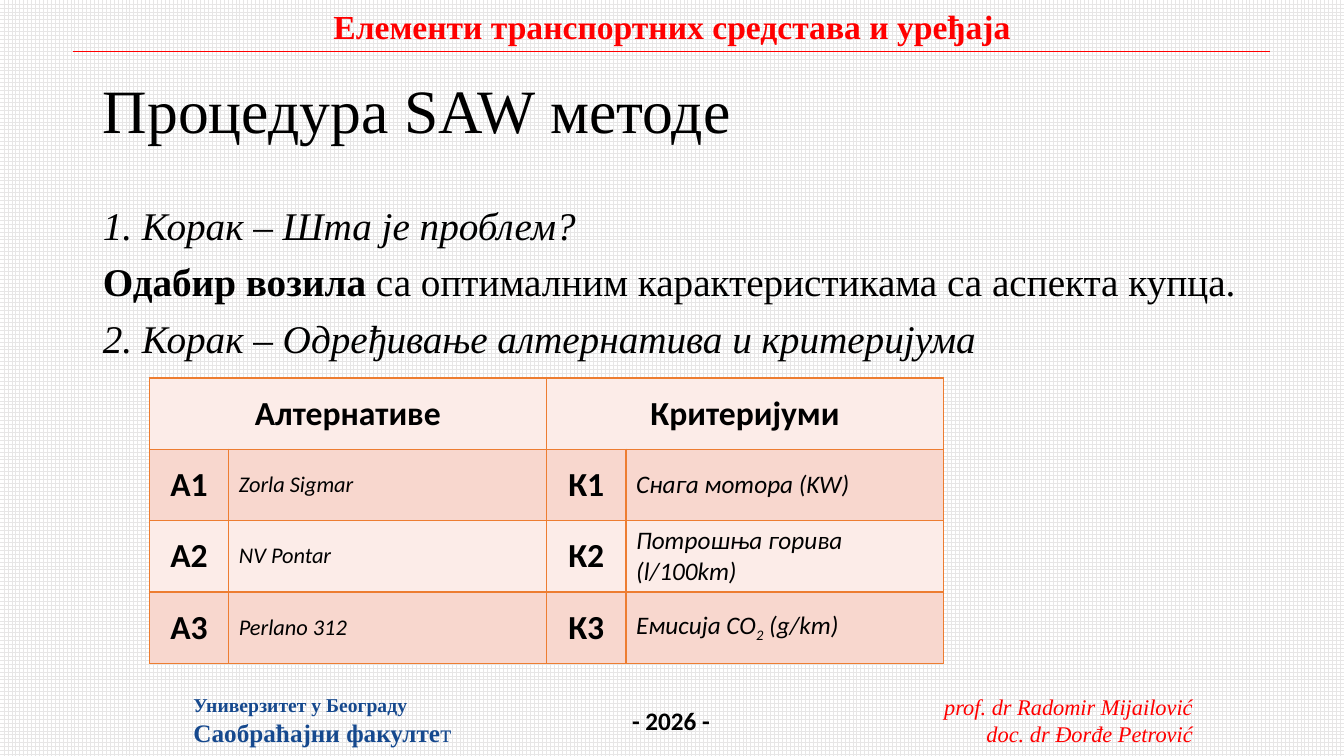
import pptx
import pptx.util
import pptx.dml.color
import pptx.enum.dml
import pptx.enum.shapes
import pptx.enum.text
import pptx.oxml
import pptx.oxml.ns
from pptx.util import Inches

SERIF = "Times New Roman"
SANS = "Calibri"
RED, BLUE, BLACK = "FF0000", "16498E", "000000"
EDGE = "ED7D31"
BANDS = ["FCECE8", "F8D7CE"]
ALIGN = pptx.enum.text.PP_ALIGN
MIDDLE = pptx.enum.text.MSO_ANCHOR.MIDDLE
FIT = pptx.enum.text.MSO_AUTO_SIZE


def color(text):
    return pptx.dml.color.RGBColor.from_string(text)


def style(run, size, face=SERIF, hue=BLACK, bold=False, italic=False):
    font = run.font
    font.size = pptx.util.Pt(size)
    font.name = face
    font.color.rgb = color(hue)
    font.bold = bold
    font.italic = italic


def write(par, text, size, align=ALIGN.LEFT, **look):
    par.text = text
    par.alignment = align
    style(par.runs[0], size, **look)


def extend(par, text, size, **look):
    """Add one more run to a paragraph."""
    run = par.add_run()
    run.text = text
    style(run, size, **look)
    return run


def place(shape, left, top, width, height):
    shape.left, shape.top = Inches(left), Inches(top)
    shape.width, shape.height = Inches(width), Inches(height)


def add_label(slide, spot, lines, align=ALIGN.LEFT, **look):
    """Add a text box with (text, size) lines; return its last paragraph."""
    box = slide.shapes.add_textbox(*[Inches(x) for x in spot])
    frame = box.text_frame
    frame.word_wrap = False
    frame.auto_size = FIT.SHAPE_TO_FIT_TEXT
    frame.text = "\n".join(text for text, size in lines)
    for par, (text, size) in zip(frame.paragraphs, lines):
        write(par, text, size, align, **look)
    return frame.paragraphs[-1]


def add_rule(slide, left, right, y):
    kind = pptx.enum.shapes.MSO_CONNECTOR.STRAIGHT
    rule = slide.shapes.add_connector(
        kind, Inches(left), Inches(y), Inches(right), Inches(y))
    rule.line.color.rgb = color(RED)
    rule.line.width = pptx.util.Pt(0.5)
    rule._element.spPr.append(pptx.oxml.parse_xml(
        f"<a:effectLst {pptx.oxml.ns.nsdecls('a')}/>"))


def fill_title(slide):
    title = slide.shapes.title
    place(title, 0.92, 0.4, 11.5, 1.45)
    frame = title.text_frame
    frame.auto_size = FIT.NONE
    frame.vertical_anchor = MIDDLE
    par = frame.paragraphs[0]
    write(par, "Процедура SAW методе", 44)
    par.line_spacing = 0.9


def fill_body(slide):
    body = slide.placeholders[1]
    place(body, 0.92, 2, 11.5, 4.76)
    frame = body.text_frame
    frame.auto_size = FIT.NONE
    lines = ["1. Корак – Шта је проблем?", "Одабир возила ",
             "2. Корак – Одређивање алтернатива и критеријума"]
    frame.text = "\n".join(lines)
    for i, par in enumerate(frame.paragraphs):
        props = par._p.get_or_add_pPr()
        props.set("marL", "0")
        props.set("indent", "0")
        props.append(pptx.oxml.parse_xml(
            f"<a:buNone {pptx.oxml.ns.nsdecls('a')}/>"))
        write(par, lines[i], 28, bold=i == 1, italic=i != 1)
        par.line_spacing = 0.9
        par.space_before = pptx.util.Pt(10 if i else 0)
    extend(frame.paragraphs[1],
           "са оптималним карактеристикама са аспекта купца.", 28)


def paint(cell, fill):
    """Give a cell its border, fill and anchor."""
    props = cell._tc.get_or_add_tcPr()
    for side in "LRTB":
        props.append(pptx.oxml.parse_xml(
            f"<a:ln{side} {pptx.oxml.ns.nsdecls('a')} w='12700'><a:solidFill>"
            f"<a:srgbClr val='{EDGE}'/></a:solidFill></a:ln{side}>"))
    cell.fill.solid()
    cell.fill.fore_color.rgb = color(fill)
    cell.vertical_anchor = MIDDLE


def add_grid(slide):
    rows = [
        ["Алтернативе", "", "Критеријуми", ""],
        ["А1", "Zorla Sigmar", "К1", "Снага мотора (KW)"],
        ["А2", "NV Pontar", "К2", "Потрошња горива (l/100km)"],
        ["А3", "Perlano 312", "К3", "Емисија CO"],
    ]
    grid = slide.shapes.add_table(
        4, 4, Inches(1.48), Inches(3.75), Inches(7.88), Inches(2.83)).table
    for i, col in enumerate(grid.columns):
        col.width = Inches(3.15 if i % 2 else 0.79)
    for r, row in enumerate(rows):
        grid.rows[r].height = Inches(2.83 / 4)
        for c, text in enumerate(row):
            cell = grid.cell(r, c)
            paint(cell, BANDS[r % 2])
            if not text:
                continue
            par = cell.text_frame.paragraphs[0]
            if c % 2:
                write(par, text, 16 if c == 1 else 18, face=SANS, italic=True)
            else:
                write(par, text, 24, ALIGN.CENTER, face=SANS, bold=True)
    for c in (0, 2):
        grid.cell(0, c).merge(grid.cell(0, c + 1))
    gas = grid.cell(3, 3).text_frame.paragraphs[0]
    low = extend(gas, "2", 18, face=SANS, italic=True)
    low._r.get_or_add_rPr().set("baseline", "-25000")
    extend(gas, " (g/km)", 18, face=SANS, italic=True)


def main():
    deck = pptx.Presentation()
    deck.slide_width, deck.slide_height = Inches(13.33), Inches(7.5)
    slide = deck.slides.add_slide(deck.slide_layouts[1])
    back = slide.background.fill
    back.patterned()
    back.pattern = pptx.enum.dml.MSO_PATTERN.LARGE_GRID
    back.fore_color.rgb = color("E7E6E6")
    back.back_color.rgb = color("FFFFFF")

    add_label(slide, (9.22, 6.83, 2.71, 0.64),
              [("prof. dr Radomir Mijailović", 16),
               ("doc. dr Đorđe Petrović", 16)],
              ALIGN.RIGHT, hue=RED, italic=True)
    add_rule(slide, 0.72, 12.6, 0.51)
    add_label(slide, (3.17, 0.01, 6.99, 0.5),
              [("Елементи транспортних средстава и уређаја", 24)],
              ALIGN.CENTER, hue=RED, bold=True)
    add_label(slide, (6.17, 6.95, 0.98, 0.4), [("- 2026 -", 18)],
              face=SANS, bold=True)
    school = add_label(slide, (1.82, 6.83, 2.79, 0.64),
                       [("Универзитет у Београду", 14),
                        ("Саобраћајни факулте", 18)], hue=BLUE, bold=True)
    extend(school, "т", 18, hue=BLUE)
    fill_title(slide)
    fill_body(slide)
    add_grid(slide)
    deck.save("out.pptx")


if __name__ == "__main__":
    main()
